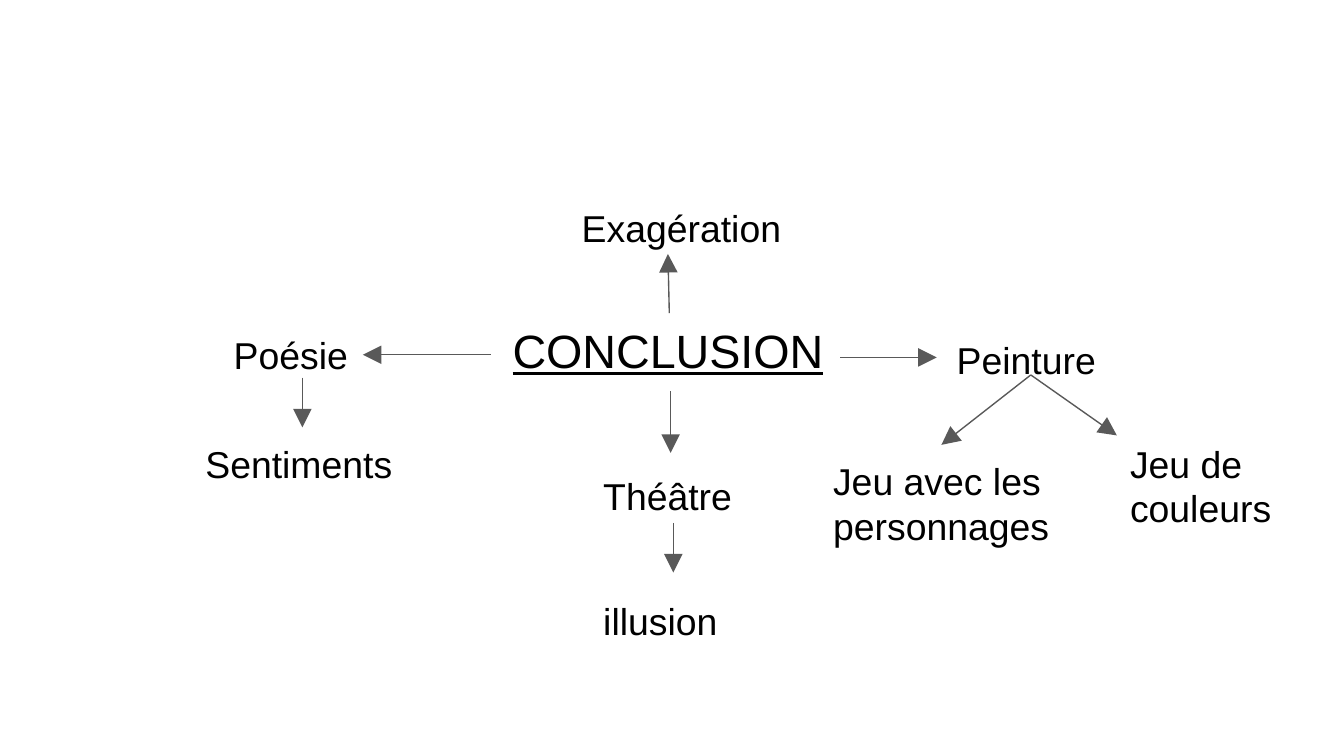
from pptx import Presentation, util as u
from pptx.dml.color import RGBColor
from pptx.enum import shapes, text
from pptx.oxml.ns import qn
from lxml import etree

WIDTH = 10
HEIGHT = WIDTH * 9 / 16
TITLE = ("CONCLUSION", (-0.03, 0, WIDTH, HEIGHT))
LABELS = [
    ("Exagération", (4.23, 1.43, 1.93, 0.29)),
    ("Théâtre", (4.39, 3.42, 1.3, 0.34)),
    ("illusion", (4.39, 4.35, 1.23, 0.38)),
    ("Peinture", (7.02, 2.41, 1.3, 0.38)),
    ("Jeu de couleurs", (8.31, 3.18, 1.54, 0.29)),
    ("Jeu avec les personnages", (6.1, 3.31, 1.81, 0.74)),
    ("Poésie", (1.64, 2.37, 1.3, 0.2)),
    ("Sentiments", (1.43, 3.18, 1.64, 0.46)),
]
ARROWS = [
    ((4.98, 2.33, 4.97, 1.89), None, None),
    ((4.99, 2.91, 4.99, 3.37), None, None),
    ((5.01, 3.89, 5.01, 4.26), None, None),
    ((6.25, 2.66, 6.97, 2.66), None, None),
    ((7.67, 2.79, 8.31, 3.24), "Peinture", None),
    ((7.67, 2.79, 7.02, 3.31), "Peinture", "Jeu avec les personnages"),
    ((3.65, 2.64, 2.7, 2.64), None, None),
    ((2.25, 2.81, 2.25, 3.18), None, "Sentiments"),
]
INK, GREY = "000000", "595959"
BOTTOM, TOP = 2, 0


def color(fmt, code):
    fmt.rgb = RGBColor.from_string(code)


def inches(values):
    return [u.Inches(v) for v in values]


def write(box, words, size, bottom=0.1):
    frame = box.text_frame
    frame.text = words
    frame.word_wrap = True
    frame.auto_size = text.MSO_AUTO_SIZE.NONE
    frame.margin_left = frame.margin_right = frame.margin_top = u.Inches(0.1)
    frame.margin_bottom = u.Inches(bottom)
    font = frame.paragraphs[0].runs[0].font
    font.name, font.size = "Arial", u.Pt(size)
    color(font.color, INK)
    return font


def add_title(slide):
    title = slide.shapes.title
    words, place = TITLE
    title.left, title.top, title.width, title.height = inches(place)
    write(title, words, 25, bottom=0.52).underline = True
    title.text_frame.vertical_anchor = text.MSO_ANCHOR.MIDDLE
    title.text_frame.paragraphs[0].alignment = text.PP_ALIGN.CENTER


def add_label(slide, words, place):
    box = slide.shapes.add_textbox(*inches(place))
    write(box, words, 20)
    return box


def add_arrow(slide, ends, start, stop):
    arrow = slide.shapes.add_connector(shapes.MSO_CONNECTOR.STRAIGHT, *inches(ends))
    if start:
        arrow.begin_connect(start, BOTTOM)
    if stop:
        arrow.end_connect(stop, TOP)
    arrow.line.width = u.Pt(0.75)
    color(arrow.line.color, GREY)
    props = arrow.line._get_or_add_ln()
    etree.SubElement(props, qn("a:tailEnd"), type="triangle", w="lg", len="lg")
    etree.SubElement(arrow._element.spPr, qn("a:effectLst"))


def main():
    """Build the concept map slide and save it."""
    deck = Presentation()
    deck.slide_width, deck.slide_height = inches((WIDTH, HEIGHT))
    slide = deck.slides.add_slide(deck.slide_layouts[5])
    add_title(slide)
    boxes = {words: add_label(slide, words, place) for words, place in LABELS}
    for ends, start, stop in ARROWS:
        add_arrow(slide, ends, boxes.get(start), boxes.get(stop))
    deck.save("out.pptx")


if __name__ == "__main__":
    main()
